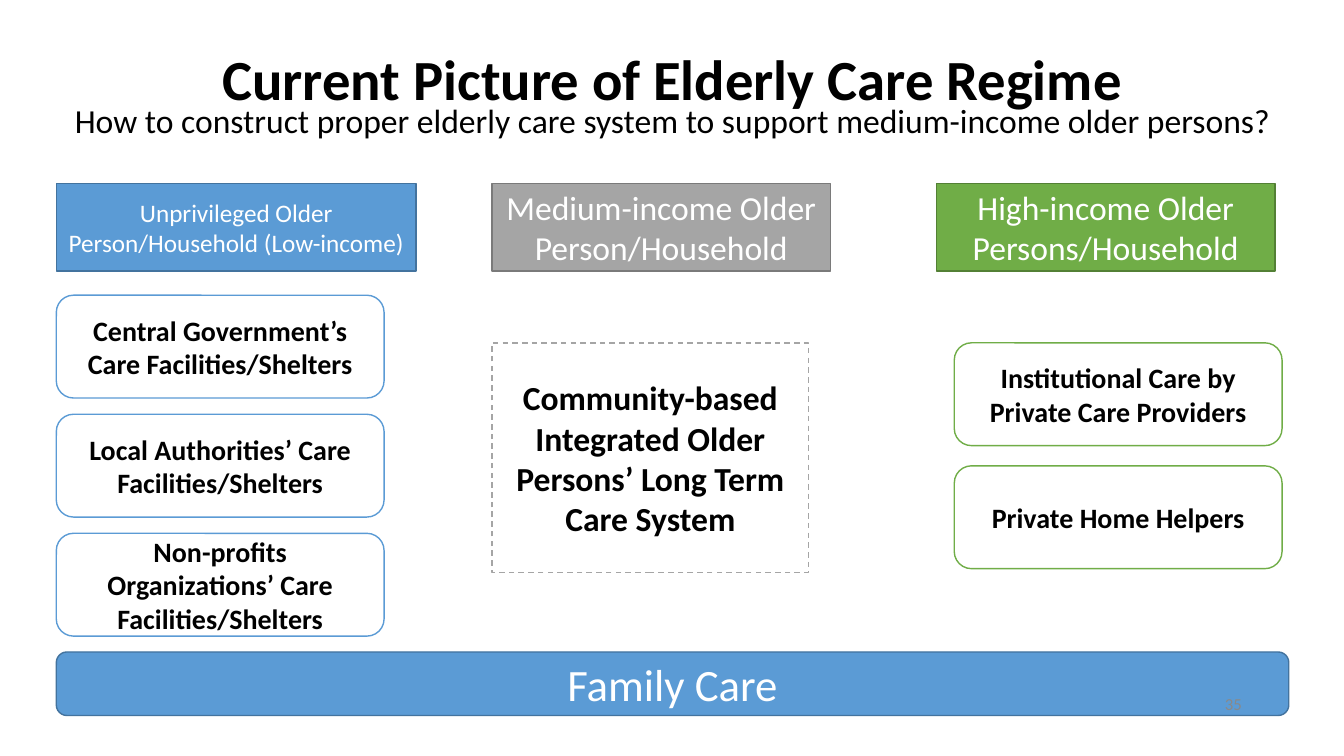
from pptx import Presentation
from pptx.dml.color import RGBColor
from pptx.enum.dml import MSO_LINE
from pptx.enum.shapes import MSO_SHAPE as Shape
from pptx.enum.text import MSO_ANCHOR as Anchor, PP_ALIGN as Align
from pptx.util import Cm, Pt

WHITE = RGBColor(0xFF, 0xFF, 0xFF)
BLACK = RGBColor(0, 0, 0)
BLUE = RGBColor(0x5B, 0x9B, 0xD5)
NAVY = RGBColor(0x43, 0x73, 0x9E)
GRAY = RGBColor(0xA5, 0xA5, 0xA5)
SLATE = RGBColor(0x7A, 0x7A, 0x7A)
GREEN = RGBColor(0x70, 0xAD, 0x47)
MOSS = RGBColor(0x53, 0x80, 0x35)
DIM = RGBColor(0x89, 0x89, 0x89)

LEFT, MID, RIGHT = 1.42, 12.4, 23.6
WIDE = 31.06


class Page:
    def __init__(self, slide, font="Calibri"):
        self.shapes = slide.shapes
        self.font = font

    def label(self, para, text, size, color, bold=False, align=Align.CENTER):
        """Fill one paragraph with styled text."""
        para.text = text
        para.alignment = align
        font = para.font
        font.name, font.size, font.bold = self.font, Pt(size), bold
        font.color.rgb = color

    def box(self, kind, area, text, size, fill, edge, ink=WHITE, bold=False):
        shape = self.shapes.add_shape(kind, *map(Cm, area))
        shape.shadow.inherit = False
        shape.fill.solid()
        shape.fill.fore_color.rgb = fill
        shape.line.color.rgb = edge
        shape.line.width = Pt(1)
        frame = shape.text_frame
        frame.word_wrap = True
        frame.vertical_anchor = Anchor.MIDDLE
        self.label(frame.paragraphs[0], text, size, ink, bold)
        return shape

    def head(self, left, width, text, size, fill, edge):
        self.box(Shape.RECTANGLE, (left, 4.62, width, 2.21), text, size, fill, edge)

    def cards(self, left, top, step, edge, texts):
        """Stack rounded outline cards downwards, one every step."""
        for row, text in enumerate(texts):
            area = left, top + row * step, 8.26, 2.59
            self.box(Shape.ROUNDED_RECTANGLE, area, text, 20, WHITE, edge, BLACK, True)

    def text(self, area):
        frame = self.shapes.add_textbox(*map(Cm, area)).text_frame
        frame.word_wrap = True
        frame.vertical_anchor = Anchor.MIDDLE
        return frame

    def title(self, text, sub):
        frame = self.text((LEFT, 1.04, WIDE, 3))
        self.label(frame.paragraphs[0], text, 40.5, BLACK, True)
        self.label(frame.add_paragraph(), sub, 24, BLACK)
        for para in frame.paragraphs:
            para.line_spacing = 0.7

    def number(self, text):
        frame = self.text((23.93, 17.22, 7.62, 1.01))
        self.label(frame.paragraphs[0], text, 12, DIM, align=Align.RIGHT)


def main():
    deck = Presentation()
    deck.slide_width, deck.slide_height = Cm(33.87), Cm(19.05)
    page = Page(deck.slides.add_slide(deck.slide_layouts[6]))

    page.head(LEFT, 9.07, "Unprivileged Older Person/Household (Low-income)", 18, BLUE, NAVY)
    page.head(MID, 8.53, "Medium-income Older Person/Household", 24, GRAY, SLATE)
    page.head(RIGHT, 8.53, "High-income Older Persons/Household", 24, GREEN, MOSS)

    page.cards(LEFT, 7.44, 3, BLUE, [
        "Central Government’s Care Facilities/Shelters",
        "Local Authorities’ Care Facilities/Shelters",
        "Non-profits Organizations’ Care Facilities/Shelters",
    ])
    page.cards(24.05, 8.64, 3.1, GREEN, [
        "Institutional Care by Private Care Providers",
        "Private Home Helpers",
    ])
    page.box(Shape.ROUNDED_RECTANGLE, (LEFT, 16.43, WIDE, 1.6), "Family Care", 32, BLUE, NAVY)
    page.title(
        "Current Picture of Elderly Care Regime",
        "How to construct proper elderly care system to support medium-income older persons?",
    )
    plan = page.box(
        Shape.RECTANGLE, (MID, 8.64, 7.98, 5.79),
        "Community-based Integrated Older Persons’ Long Term Care System",
        24, WHITE, GRAY, BLACK, True,
    )
    plan.line.dash_style = MSO_LINE.DASH
    page.number("35")

    deck.save("out.pptx")


if __name__ == "__main__":
    main()
